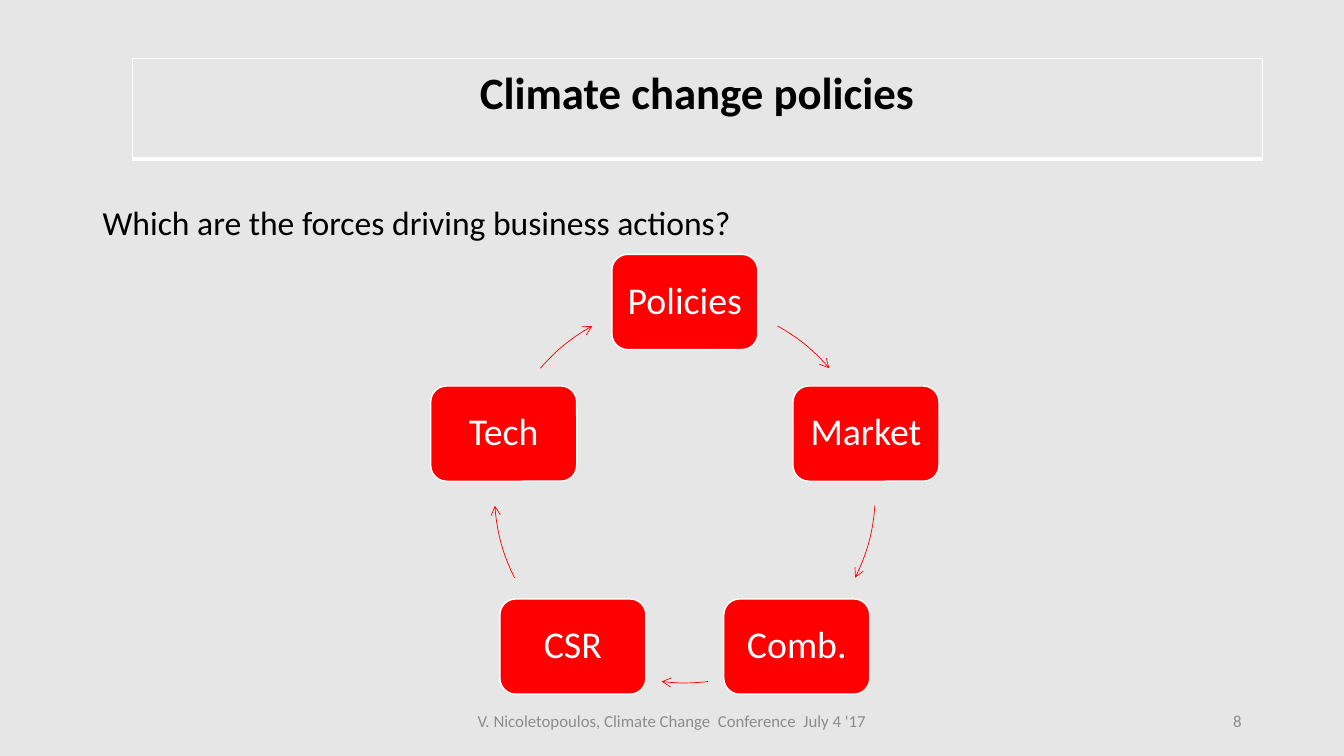
import math
import lxml.etree
import pptx
import pptx.util
import pptx.dml.color
import pptx.enum.shapes
import pptx.enum.text
import pptx.oxml.ns

Cm, Pt = pptx.util.Cm, pptx.util.Pt
ALIGN = pptx.enum.text.PP_ALIGN
MIDDLE = pptx.enum.text.MSO_ANCHOR.MIDDLE
SHAPE = pptx.enum.shapes.MSO_SHAPE
qn = pptx.oxml.ns.qn
COLOURS = {"background": "E7E6E6", "text": "000000", "footer": "8C8C8C",
           "force": "FF0000", "light": "FFFFFF"}


def rgb(name):
    return pptx.dml.color.RGBColor.from_string(COLOURS[name])


def write(frame, text, colour, font_format, paragraph_format):
    paragraph = frame.paragraphs[0]
    run = paragraph.add_run()
    run.text = text
    run.font.color.rgb = rgb(colour)
    for target, values in ((run.font, {"name": "Calibri", **font_format}),
                           (paragraph, paragraph_format)):
        for attribute, value in values.items():
            setattr(target, attribute, value)
    return paragraph


deck = pptx.Presentation()
deck.slide_width, deck.slide_height = Cm(33.87), Cm(19.05)
slide = deck.slides.add_slide(deck.slide_layouts[1])
slide.background.fill.solid()
slide.background.fill.fore_color.rgb = rgb("background")

# The heading sits in a table, so the title placeholder is not needed
unused_title = slide.shapes.title.element
unused_title.getparent().remove(unused_title)

# Question
question = slide.placeholders[1]
for attribute, value in {"left": 2.33, "top": 5.08, "width": 29.21, "height": 12.7}.items():
    setattr(question, attribute, Cm(value))
question_line = write(question.text_frame, "Which are the forces driving business actions?",
                      "text", {"size": Pt(24)},
                      {"line_spacing": 0.9, "space_before": Pt(10), "alignment": ALIGN.LEFT})
question_properties = question_line._p.get_or_add_pPr()
question_properties.set("marL", "0")
question_properties.set("indent", "0")
lxml.etree.SubElement(question_properties, qn("a:buNone"))

# Footer and page number
for text, left, width, alignment in (
        ("V. Nicoletopoulos, Climate Change  Conference  July 4 '17", 11.22, 11.43, ALIGN.CENTER),
        ("8", 23.92, 7.62, ALIGN.RIGHT)):
    footer = slide.shapes.add_textbox(Cm(left), Cm(17.65), Cm(width), Cm(1.02))
    footer.text_frame.word_wrap = True
    footer.text_frame.vertical_anchor = MIDDLE
    write(footer.text_frame, text, "footer", {"size": Pt(12)}, {"alignment": alignment})

# Heading table
heading_table = slide.shapes.add_table(1, 1, Cm(3.33), Cm(1.47), Cm(28.48), Cm(2.54)).table
heading_table.first_row = heading_table.horz_banding = False
heading = heading_table.cell(0, 0)
for attribute, value in {"margin_left": 0.18, "margin_right": 0.18,
                         "margin_top": 0, "margin_bottom": 0}.items():
    setattr(heading, attribute, Cm(value))
write(heading.text_frame, "Climate change policies", "text",
      {"size": Pt(32), "bold": True}, {"alignment": ALIGN.CENTER, "line_spacing": 1.15})
heading_properties = heading._tc.get_or_add_tcPr()
for edge, weight in {"lnL": 1, "lnR": 1, "lnT": 1, "lnB": 3}.items():
    border = lxml.etree.SubElement(heading_properties, qn("a:" + edge), w=str(Pt(weight)))
    border_fill = lxml.etree.SubElement(border, qn("a:solidFill"))
    lxml.etree.SubElement(border_fill, qn("a:srgbClr"), val=COLOURS["light"])
heading.fill.background()

# Cycle of forces: boxes at equal angles, clockwise from the top
CENTRE_X, CENTRE_Y, RADIUS = 17.26, 12.41, 4.8
BOX_WIDTH, BOX_HEIGHT = 3.68, 2.4
ANGLE_UNIT = 0.6  # one degree as an adjustment value
forces = ["Policies", "Market", "Comb.", "CSR", "Tech"]
arcs = [(29.1, 49.3), (94, 116.6), (173, 187), (243.4, 266), (310.7, 330.9)]

for position, (force, arc) in enumerate(zip(forces, arcs)):
    angle = math.radians(position * 360 / len(forces))
    box = slide.shapes.add_shape(
        SHAPE.ROUNDED_RECTANGLE,
        Cm(CENTRE_X + RADIUS * math.sin(angle) - BOX_WIDTH / 2),
        Cm(CENTRE_Y - RADIUS * math.cos(angle) - BOX_HEIGHT / 2),
        Cm(BOX_WIDTH), Cm(BOX_HEIGHT))
    box.shadow.inherit = False
    box.fill.solid()
    box.fill.fore_color.rgb = rgb("force")
    box.line.color.rgb = rgb("light")
    box.line.width = Pt(1)
    for attribute, value in {"word_wrap": False, "vertical_anchor": MIDDLE}.items():
        setattr(box.text_frame, attribute, value)
    write(box.text_frame, force, "light", {"size": Pt(27)},
          {"alignment": ALIGN.CENTER, "line_spacing": 0.9})

    # Curved arrow to the next force
    arrow = slide.shapes.add_shape(SHAPE.ARC, Cm(CENTRE_X - RADIUS), Cm(CENTRE_Y - RADIUS),
                                   Cm(2 * RADIUS), Cm(2 * RADIUS))
    for end, bend in enumerate(arc):
        arrow.adjustments[end] = (bend - 90) % 360 * ANGLE_UNIT
    arrow.shadow.inherit = False
    arrow.fill.background()
    arrow.line.color.rgb = rgb("force")
    arrow.line.width = Pt(0.5)
    lxml.etree.SubElement(arrow.line._get_or_add_ln(), qn("a:tailEnd"), type="arrow")

deck.save("out.pptx")
